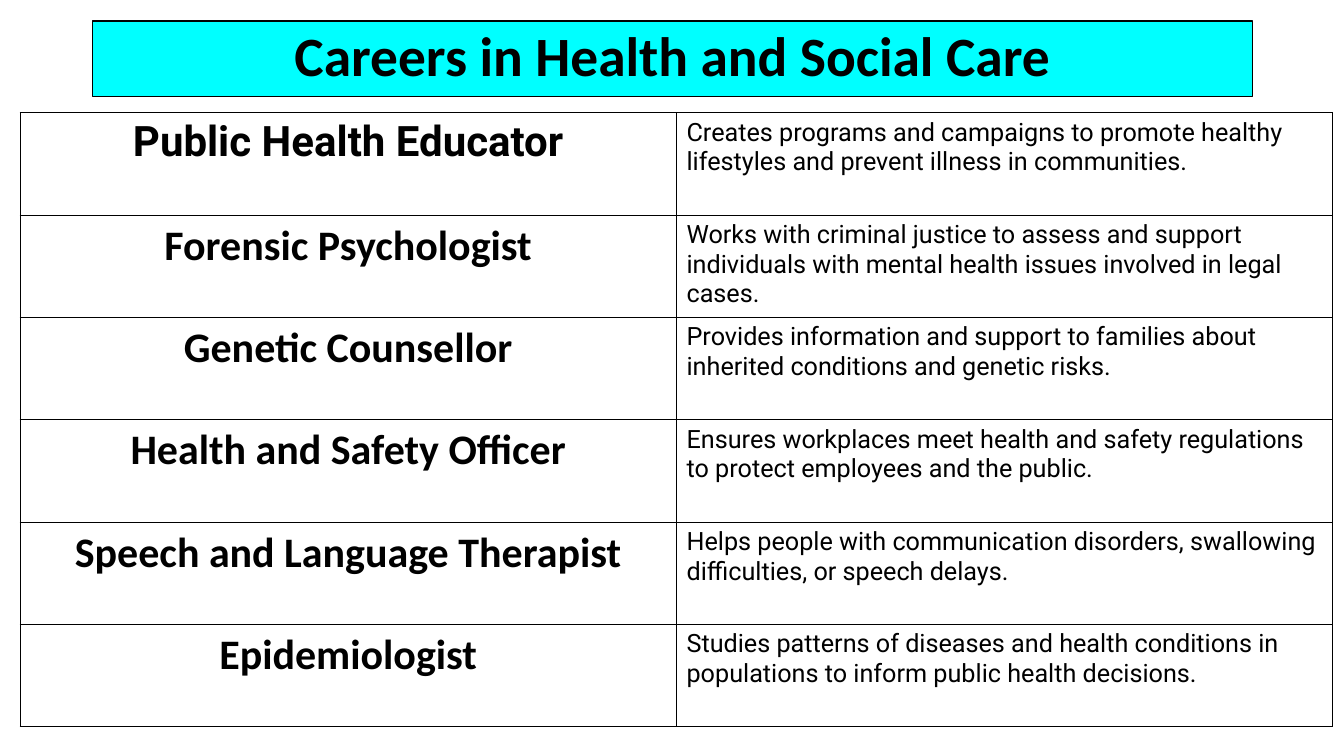
from dataclasses import dataclass

from lxml.etree import SubElement
from pptx import Presentation
from pptx.dml.color import RGBColor
from pptx.enum.text import MSO_ANCHOR, MSO_AUTO_SIZE, PP_ALIGN
from pptx.oxml.ns import qn
from pptx.util import Inches, Pt


@dataclass(frozen=True)
class Theme:
    black: RGBColor = RGBColor(0, 0, 0)
    white: RGBColor = RGBColor(255, 255, 255)
    cyan: RGBColor = RGBColor(0, 255, 255)
    heading_font: str = "Calibri"
    body_font: str = "Roboto"
    title_size: float = 39.6
    career_size: int = 30
    detail_size: int = 18
    line_width: int = 1


THEME = Theme()

CAREERS = [
    ("Public Health Educator", THEME.body_font,
     "Creates programs and campaigns to promote healthy lifestyles and prevent illness in communities."),
    ("Forensic Psychologist", THEME.heading_font,
     "Works with criminal justice to assess and support individuals with mental health issues involved in legal cases."),
    ("Genetic Counsellor", THEME.heading_font,
     "Provides information and support to families about inherited conditions and genetic risks."),
    ("Health and Safety Officer", THEME.heading_font,
     "Ensures workplaces meet health and safety regulations to protect employees and the public."),
    ("Speech and Language Therapist", THEME.heading_font,
     "Helps people with communication disorders, swallowing difficulties, or speech delays."),
    ("Epidemiologist", THEME.heading_font,
     "Studies patterns of diseases and health conditions in populations to inform public health decisions."),
]


def write(tf, text, font, size, bold, align):
    tf.text = text
    p = tf.paragraphs[0]
    p.alignment = align
    p.font.name = font
    p.font.size = Pt(size)
    p.font.bold = bold
    p.font.color.rgb = THEME.black
    return p


def format_title(sp, text):
    sp.left, sp.top = Inches(0.92), Inches(0.21)
    sp.width, sp.height = Inches(11.5), Inches(0.75)
    sp.fill.solid()
    sp.fill.fore_color.rgb = THEME.cyan
    sp.line.color.rgb = THEME.black
    sp.line.width = Pt(THEME.line_width)
    tf = sp.text_frame
    tf.auto_size = MSO_AUTO_SIZE.NONE
    tf.vertical_anchor = MSO_ANCHOR.MIDDLE
    p = write(tf, text, THEME.heading_font, THEME.title_size, True, PP_ALIGN.CENTER)
    p.line_spacing = 0.9


def format_cell(cell):
    tc_pr = cell._tc.get_or_add_tcPr()
    for side in ("a:lnL", "a:lnR", "a:lnT", "a:lnB"):
        ln = SubElement(tc_pr, qn(side), w=str(Pt(THEME.line_width)))
        fill = SubElement(ln, qn("a:solidFill"))
        SubElement(fill, qn("a:srgbClr"), val=str(THEME.black))
    cell.fill.solid()
    cell.fill.fore_color.rgb = THEME.white


def add_career_table(slide, careers):
    frame = slide.shapes.add_table(
        len(careers), 2, Inches(0.2), Inches(1.12), Inches(13.02), Inches(6.09))
    table = frame.table
    table.first_row = False
    table.horz_banding = False
    for row, (career, font, detail) in zip(table.rows, careers):
        name_cell, detail_cell = row.cells
        write(name_cell.text_frame, career, font, THEME.career_size, True, PP_ALIGN.CENTER)
        write(detail_cell.text_frame, detail, THEME.body_font, THEME.detail_size, False, PP_ALIGN.LEFT)
        for cell in row.cells:
            format_cell(cell)


def main():
    prs = Presentation()
    prs.slide_width, prs.slide_height = Inches(13.33), Inches(7.5)
    slide = prs.slides.add_slide(prs.slide_layouts[5])
    format_title(slide.shapes.title, "Careers in Health and Social Care")
    add_career_table(slide, CAREERS)
    prs.save("out.pptx")


if __name__ == "__main__":
    main()
